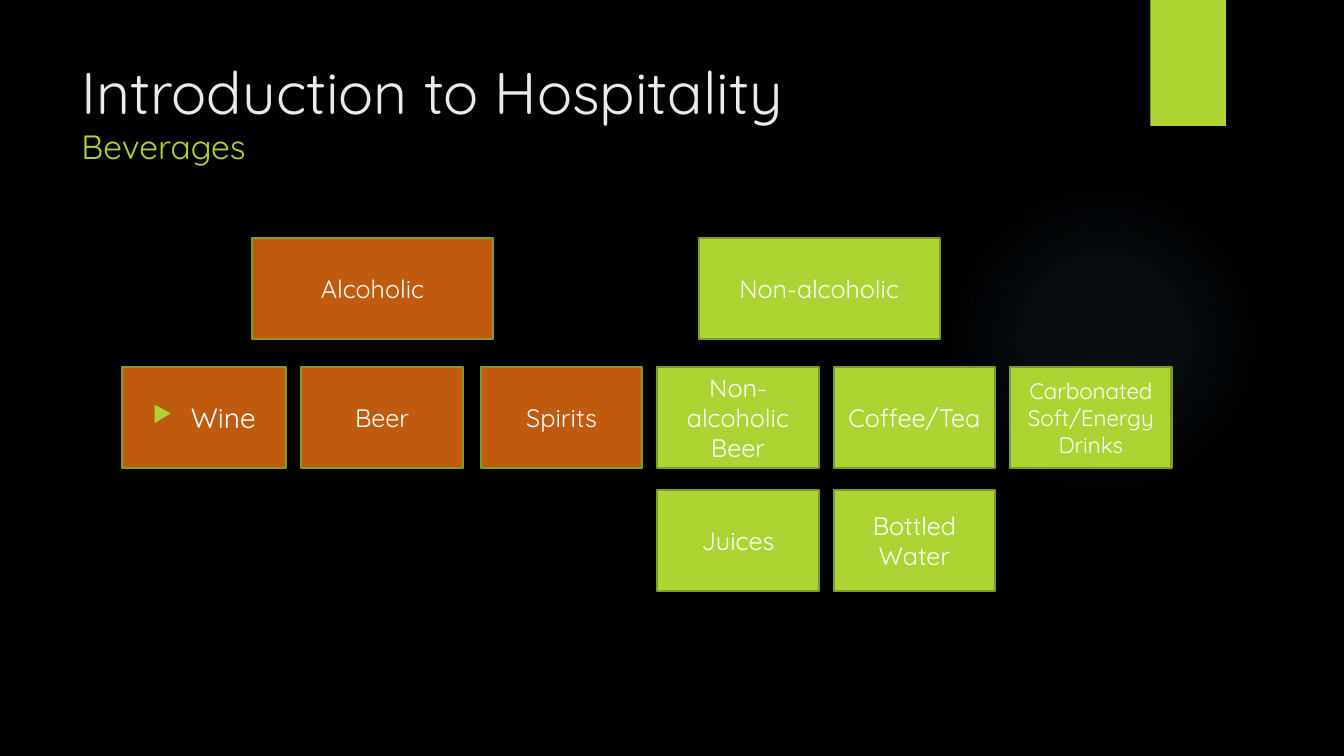
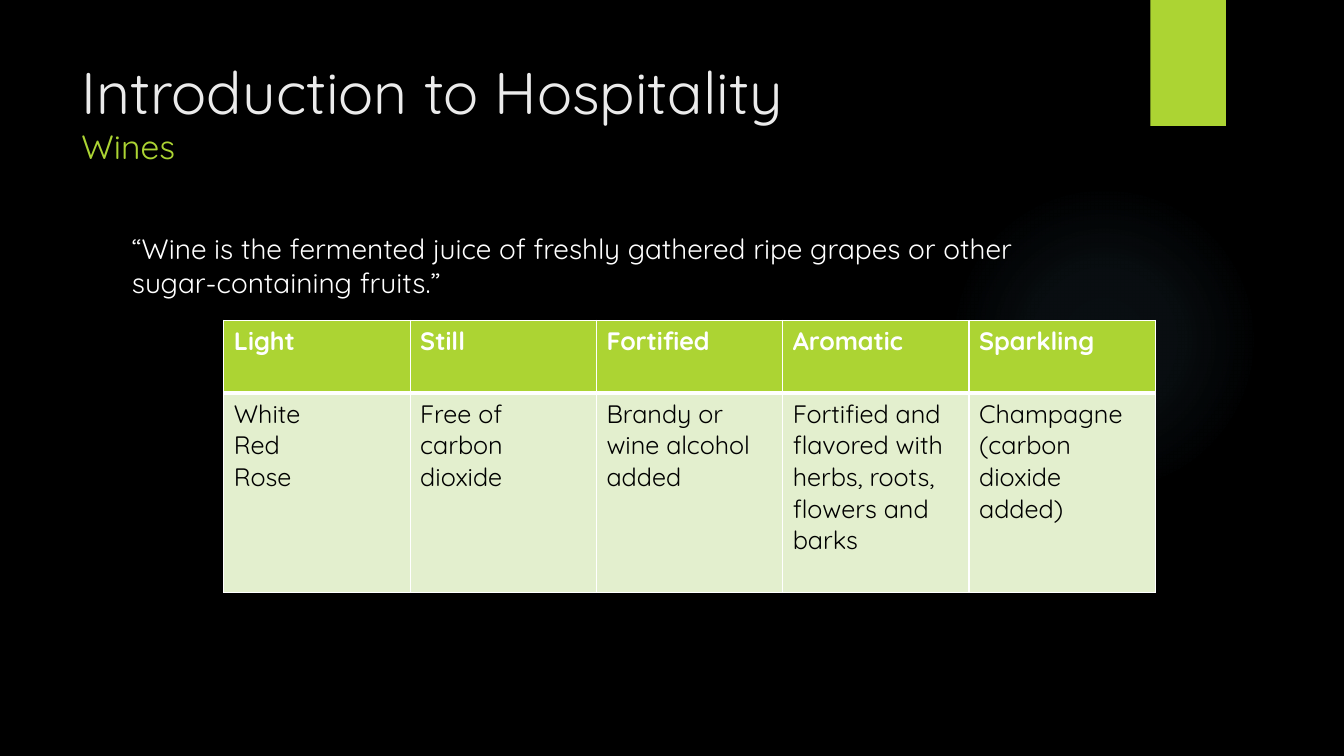
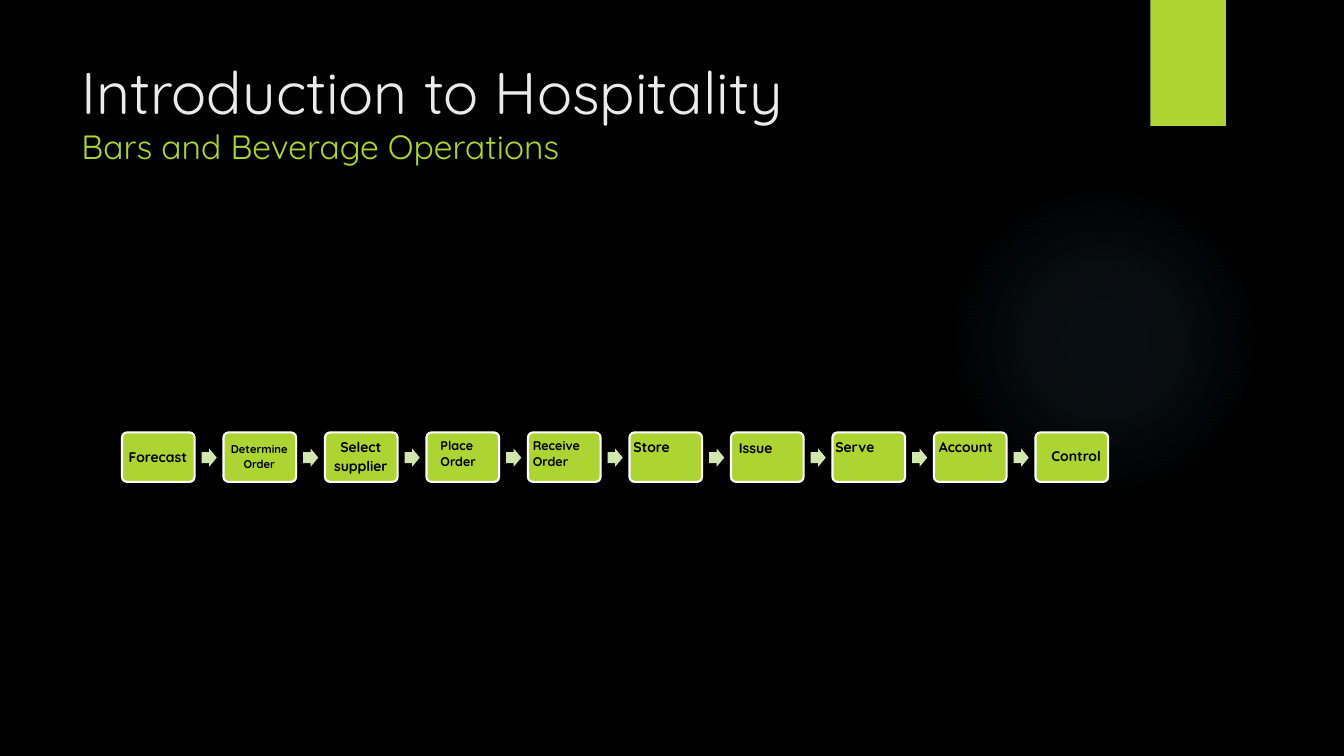
import collections
import pptx
import pptx.util
import pptx.dml.color
import pptx.enum.shapes
import pptx.enum.text
import pptx.oxml
import pptx.oxml.ns

Inches, Pt = pptx.util.Inches, pptx.util.Pt
RGBColor = pptx.dml.color.RGBColor
SHAPE = pptx.enum.shapes.MSO_SHAPE
ALIGN = pptx.enum.text.PP_ALIGN
ANCHOR = pptx.enum.text.MSO_ANCHOR

FONT = "Quicksand"
BLACK = RGBColor(0x00, 0x00, 0x00)
WHITE = RGBColor(0xFF, 0xFF, 0xFF)
TITLE = RGBColor(0xEB, 0xEB, 0xEB)
LIME = RGBColor(0xAC, 0xD4, 0x33)
OLIVE = RGBColor(0x7F, 0x9D, 0x26)
ORANGE = RGBColor(0xC0, 0x5A, 0x0E)
PALE = RGBColor(0xE3, 0xEF, 0xCE)
ARROW = RGBColor(0xD2, 0xE6, 0xAE)
GLOW = RGBColor(0x7A, 0xC4, 0xF0)

Box = collections.namedtuple("Box", "x y w h")
Step = collections.namedtuple("Step", "lines size dx dy w h", defaults=(0.01, 0.02, 0.69, 0.46))

ALCOHOLIC = [["Wine"], ["Beer"], ["Spirits"]]
SOFT = [["Non-alcoholic Beer"], ["Coffee/Tea"], ["Carbonated Soft/Energy", "Drinks"],
        ["Juices"], ["Bottled", "Water"]]
WINES = [
    ("Light", ["White", "Red", "Rose"]),
    ("Still", ["Free of carbon dioxide"]),
    ("Fortified", ["Brandy or wine alcohol added"]),
    ("Aromatic", ["Fortified and flavored with herbs, roots, flowers and barks"]),
    ("Sparkling", ["Champagne", "(carbon dioxide added)"]),
]
CENTRED_STEPS = [Step(["Forecast"], 10), Step(["Determine", "Order"], 8), Step(["Select", "supplier"], 10)]
LEFT_STEPS = [
    Step(["Place", "Order"], 9, 0.04, 0.01, 1.11, 0.4),
    Step(["Receive", "Order"], 9, -0.05, 0.01, 1.53, 0.4),
    Step(["Store"], 10, -0.06, 0.01, 1.53, 0.27),
    Step(["Issue"], 10, -0.02, 0.02, 1.64, 0.27),
    Step(["Serve"], 10, -0.07, 0.01, 1.91, 0.27),
    Step(["Account"], 10, -0.05, 0.01, 0.88, 0.27),
    Step(["Control"], 10, 0.06, 0.1, 0.69, 0.27),
]


def place(box):
    """Return a box as four lengths."""
    return [Inches(v) for v in box]


def add_run(p, text, size, color, bold=False):
    """Add one styled run to a paragraph."""
    r = p.add_run()
    r.text = text
    r.font.name, r.font.size, r.font.bold = FONT, Pt(size), bold
    r.font.color.rgb = color


def write(tf, lines, size, color, bold=False, align=ALIGN.LEFT):
    """Write each line as a paragraph."""
    tf.word_wrap = True
    for i, line in enumerate(lines):
        p = tf.paragraphs[0] if i == 0 else tf.add_paragraph()
        p.alignment = align
        add_run(p, line, size, color, bold)


def add_text(s, box):
    """Add an empty wrapping text box and return its frame."""
    tf = s.shapes.add_textbox(*place(box)).text_frame
    tf.word_wrap = True
    return tf


def add_shape(s, kind, box, fill, line=None):
    """Add a flat shape with an optional outline."""
    sp = s.shapes.add_shape(kind, *place(box))
    sp.shadow.inherit = False
    sp.fill.solid()
    sp.fill.fore_color.rgb = fill
    if line is None:
        sp.line.fill.background()
    else:
        sp.line.color.rgb = line
        sp.line.width = Pt(1.5)
    return sp


def add_glow(s, box):
    """Add a soft round light that fades to its edge."""
    sp = add_shape(s, SHAPE.OVAL, box, GLOW)
    stops = "".join(
        f'<a:gs pos="{pos}000"><a:srgbClr val="{GLOW}"><a:alpha val="{alpha}000"/></a:srgbClr></a:gs>'
        for pos, alpha in ((0, 7), (36, 6), (69, 0)))
    grad = pptx.oxml.parse_xml(
        f'<a:gradFill {pptx.oxml.ns.nsdecls("a")}><a:gsLst>{stops}</a:gsLst><a:path path="circle">'
        '<a:fillToRect l="50000" t="50000" r="50000" b="50000"/></a:path></a:gradFill>')
    solid = sp._element.spPr.find(pptx.oxml.ns.qn("a:solidFill"))
    sp._element.spPr.replace(solid, grad)


def add_slide(prs, subtitle):
    """Add a slide with backdrop, ribbon and two-line title."""
    s = prs.slides.add_slide(prs.slide_layouts[6])
    s.background.fill.solid()
    s.background.fill.fore_color.rgb = BLACK
    add_glow(s, Box(9.41, 1.83, 3.08, 3.08))
    add_shape(s, SHAPE.RECTANGLE, Box(11.41, 0, 0.75, 1.25), LIME)
    p = add_text(s, Box(0.71, 0.5, 10.29, 1.53)).paragraphs[0]
    add_run(p, "Introduction to Hospitality", 42, TITLE)
    p.add_line_break()
    add_run(p, subtitle, 24, LIME)
    return s


def add_card(s, box, lines, fill, size=18):
    """Add an outlined card with centred text."""
    sp = add_shape(s, SHAPE.RECTANGLE, box, fill, OLIVE)
    sp.text_frame.vertical_anchor = ANCHOR.MIDDLE
    write(sp.text_frame, lines, size, WHITE, align=ALIGN.CENTER)
    return sp


def add_bullet(p):
    """Give a paragraph a hanging triangle bullet."""
    pPr = p._p.get_or_add_pPr()
    pPr.set("marL", str(Inches(0.38)))
    pPr.set("indent", str(-Inches(0.38)))
    for xml in (f'<a:buClr {{}}><a:srgbClr val="{LIME}"/></a:buClr>',
                '<a:buSzPct {} val="80000"/>', '<a:buChar {} char="▶"/>'):
        pPr.append(pptx.oxml.parse_xml(xml.format(pptx.oxml.ns.nsdecls("a"))))


def add_family(s, box, heading, heading_dx, kinds, fill):
    """Add a heading card over rows of three kinds and return the kind cards."""
    add_card(s, Box(box.x + heading_dx, box.y, 2.39, 1), [heading], fill)
    width = 1.6
    pitch = (box.w - width) / 2
    cards = []
    for i, lines in enumerate(kinds):
        row, col = divmod(i, 3)
        cell = Box(box.x + col * pitch, box.y + 1.28 + row * 1.22, width, 1)
        size = 16 if len(lines[0]) > 20 else 18
        cards.append(add_card(s, cell, lines, fill, size))
    return cards


def set_borders(cell, top, bottom):
    """Draw white borders around a table cell."""
    tcPr = cell._tc.get_or_add_tcPr()
    for side, width in (("L", 1), ("R", 1), ("T", top), ("B", bottom)):
        tcPr.append(pptx.oxml.parse_xml(
            f'<a:ln{side} {pptx.oxml.ns.nsdecls("a")} w="{Pt(width)}">'
            f'<a:solidFill><a:srgbClr val="{WHITE}"/></a:solidFill></a:ln{side}>'))


def add_wine_table(s, box):
    """Add the table of wine types."""
    table = s.shapes.add_table(2, len(WINES), *place(box)).table
    for row, height in zip(table.rows, (0.72, box.h - 0.72)):
        row.height = Inches(height)
    styles = ((LIME, WHITE, True, 1, 3), (PALE, BLACK, False, 3, 1))
    for c, (name, notes) in enumerate(WINES):
        table.columns[c].width = Inches(box.w / len(WINES))
        for r, lines in enumerate(([name], notes)):
            fill, color, bold, top, bottom = styles[r]
            cell = table.cell(r, c)
            set_borders(cell, top, bottom)
            cell.fill.solid()
            cell.fill.fore_color.rgb = fill
            write(cell.text_frame, lines, 18, color, bold)


def add_label(s, x, y, step, centred):
    """Write a step's label over its card."""
    tf = add_text(s, Box(x + step.dx, y + step.dy, step.w, step.h))
    write(tf, step.lines, step.size, BLACK, True, ALIGN.CENTER if centred else ALIGN.LEFT)
    if centred:
        tf.vertical_anchor = ANCHOR.MIDDLE
        tf.margin_left = tf.margin_right = tf.margin_top = tf.margin_bottom = Inches(0.03)
        for p in tf.paragraphs:
            p.line_spacing = 0.9
            p.space_after = Pt(0.3 * step.size)
    elif step.lines == ["Control"]:
        tf.word_wrap = False


def add_process(s, box):
    """Add a row of step cards joined by arrows."""
    steps = CENTRED_STEPS + LEFT_STEPS
    width = 0.72
    pitch = (box.w - width) / (len(steps) - 1)
    for i, step in enumerate(steps):
        x = box.x + i * pitch
        card = add_shape(s, SHAPE.ROUNDED_RECTANGLE, Box(x, box.y, width, box.h), LIME, WHITE)
        card.adjustments[0] = 0.1
        if i < len(steps) - 1:
            arrow = add_shape(s, SHAPE.RIGHT_ARROW, Box(x + 0.79, box.y + 0.16, 0.15, 0.18), ARROW)
            arrow.adjustments[0] = 0.6
        add_label(s, x, box.y, step, i < len(CENTRED_STEPS))


def beverages_slide(prs):
    """Build the tree of beverage kinds."""
    s = add_slide(prs, "Beverages")
    wine = add_family(s, Box(1.21, 2.36, 5.16, 2.28), "Alcoholic", 1.29, ALCOHOLIC, ORANGE)[0]
    wine.width = Inches(1.63)
    p = wine.text_frame.paragraphs[0]
    add_bullet(p)
    p.runs[0].font.size = Pt(20)
    add_family(s, Box(6.52, 2.36, 5.1, 3.5), "Non-alcoholic", 0.41, SOFT, LIME)


def wines_slide(prs):
    """Build the wine definition and table."""
    s = add_slide(prs, "Wines")
    quote = "“Wine is the fermented juice of freshly gathered ripe grapes or other sugar-containing fruits.”"
    write(add_text(s, Box(1.21, 2.25, 9.78, 4.59)), [quote], 20, WHITE)
    add_wine_table(s, Box(2.22, 3.18, 9.24, 2.7))


def operations_slide(prs):
    """Build the chain of bar operations."""
    s = add_slide(prs, "Bars and Beverage Operations")
    add_process(s, Box(1.21, 4.29, 9.78, 0.49))


def main():
    """Build and save the presentation."""
    prs = pptx.Presentation()
    prs.slide_width, prs.slide_height = Inches(13.33), Inches(7.5)
    beverages_slide(prs)
    wines_slide(prs)
    operations_slide(prs)
    prs.save("out.pptx")


if __name__ == "__main__":
    main()
